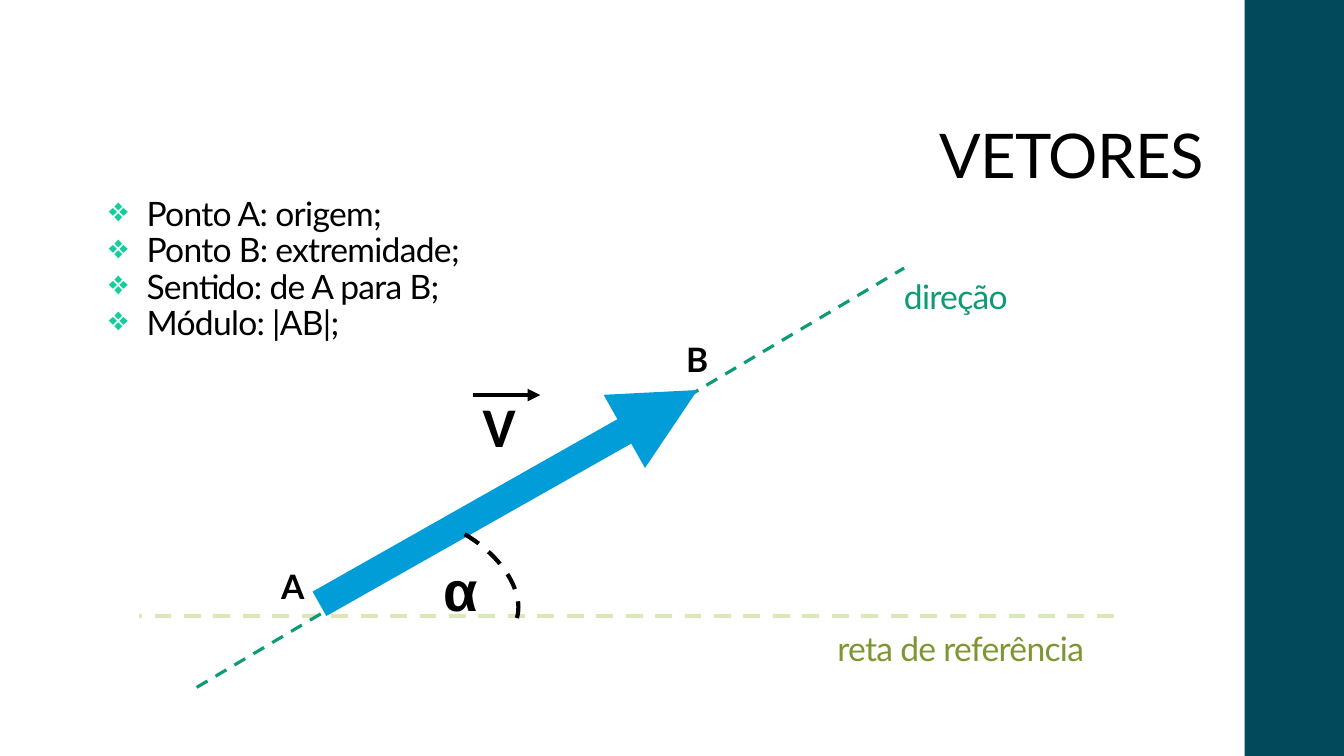
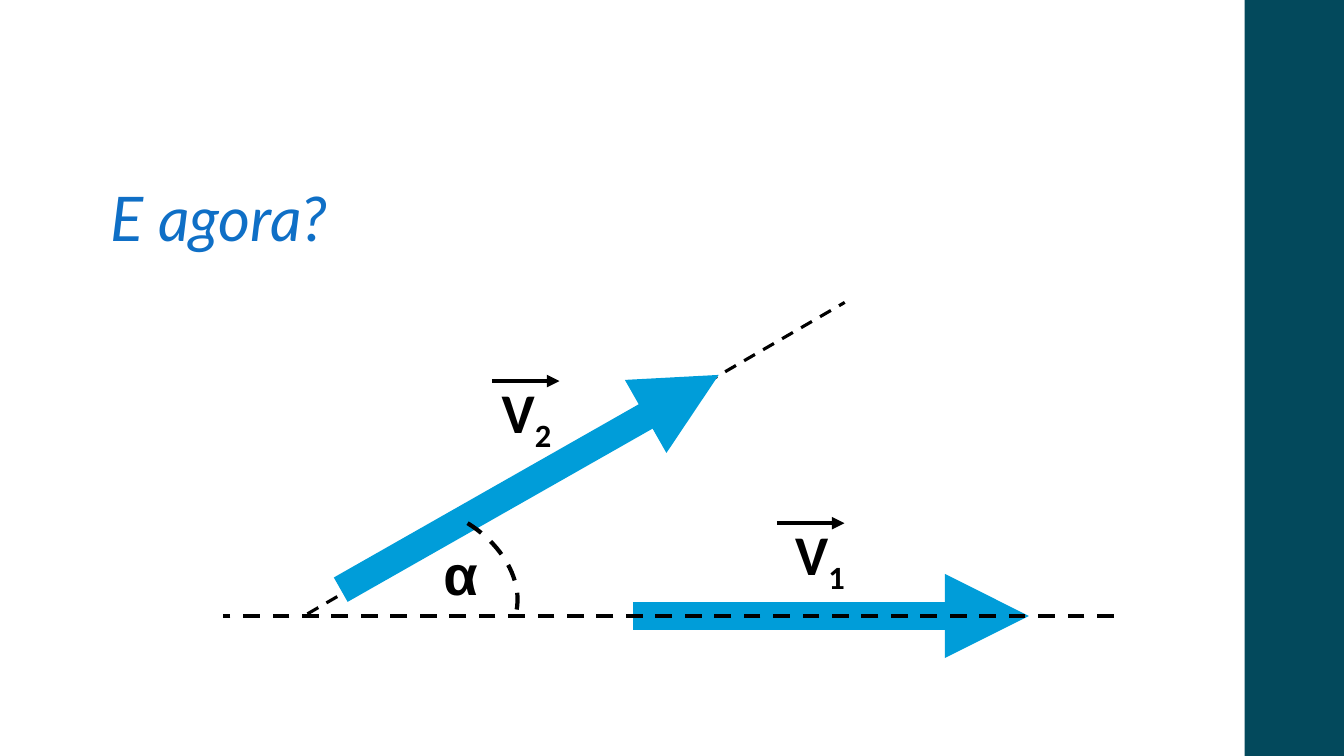
"""Two slides on vectors, drawn as native shapes."""
from dataclasses import dataclass
from typing import Any

from lxml import etree
from pptx import Presentation
from pptx import util as u
from pptx.dml.color import RGBColor
from pptx.enum import dml, shapes, text
from pptx.oxml import ns


@dataclass(frozen=True)
class Theme:
    """Colours, fonts and type sizes of the deck."""
    band: str = "03495C"
    ink: str = "000000"
    arrow: str = "009DD9"
    green: str = "0C9B74"
    mint: str = "10CF9B"
    pale: str = "DBE7B6"
    olive: str = "7E9632"
    blue: str = "0F6FC6"
    main: str = "Lato"
    sign: str = "Calibri"
    greek: str = "Arial"
    head: int = 44
    mark: int = 40
    body: int = 24


T = Theme()


@dataclass
class Box:
    """A region of a slide; shapes are placed from its top left corner."""
    tree: Any
    x: float
    y: float
    w: float
    h: float

    def at(self, x, y):
        """Turn a point of the region into slide lengths."""
        return u.Pt(self.x + x), u.Pt(self.y + y)

    def sub(self, x, y, w, h):
        """Return a smaller region inside this one."""
        return Box(self.tree, self.x + x, self.y + y, w, h)


def tag(node, name, **attrs):
    """Append a drawing element to a node."""
    return etree.SubElement(node, ns.qn(f"a:{name}"), attrs)


def style(run, size, color, font=T.main, bold=False, tight=False, italic=False):
    """Format one run of text."""
    run.font.size, run.font.name = u.Pt(size), font
    run.font.bold, run.font.italic = bold, italic
    run.font.color.rgb = RGBColor.from_string(color)
    if tight:
        run.font._element.set("spc", "-50")


def write(box, words, size, color, align=None, low=False, wrap=True, **look):
    """Fill a region with text, one paragraph a line."""
    shape = box.tree.add_textbox(*box.at(0, 0), u.Pt(box.w), u.Pt(box.h))
    frame = shape.text_frame
    frame.text = words
    frame.word_wrap = wrap
    frame.vertical_anchor = text.MSO_ANCHOR.BOTTOM if low else text.MSO_ANCHOR.TOP
    for para in frame.paragraphs:
        para.alignment = align
        if low:
            para.line_spacing = 0.9
        for run in para.runs:
            style(run, size, color, tight=low, **look)
    return frame


def pen(line, color, width, dash):
    """Set the stroke of a line."""
    line.color.rgb = RGBColor.from_string(color)
    line.width = u.Pt(width)
    if dash:
        line.dash_style = dml.MSO_LINE.DASH


def draw(box, start, end, color, width, dash=False, tip=False):
    """Draw a straight line, with an arrowhead if asked."""
    line = box.tree.add_connector(
        shapes.MSO_CONNECTOR.STRAIGHT, *box.at(*start), *box.at(*end))
    pen(line.line, color, width, dash)
    if tip:
        tag(line.line._get_or_add_ln(), "tailEnd", type="triangle")
    tag(line._element.spPr, "effectLst")


def vector(box, start, end):
    """Draw a thick vector arrow."""
    draw(box, start, end, T.arrow, 20, tip=True)


def name(box, x, y, index="", pad=0):
    """Write a vector name below its small arrow."""
    draw(box, (x, y), (x + 48.2, y), T.ink, 3, tip=True)
    area = box.sub(x + pad, y - 5.8, 80, 55.5)
    frame = write(area, "V", T.mark, T.ink, font=T.sign, bold=True)
    frame.margin_left = 0
    if index:
        run = frame.paragraphs[0].add_run()
        run.text = index
        style(run, T.mark, T.ink, T.sign, bold=True)
        run.font._element.set("baseline", "-25000")


def angle(box, curve, x, y):
    """Draw a dashed Bézier arc and its alpha sign."""
    dots = []
    for step in range(25):
        t = step / 24
        rate = ((1 - t) ** 3, 3 * t * (1 - t) ** 2, 3 * t * t * (1 - t), t ** 3)
        dots.append(box.at(*(sum(r * p[k] for r, p in zip(rate, curve))
                             for k in (0, 1))))
    form = box.tree.build_freeform(*dots[0])
    form.add_line_segments(dots[1:], close=False)
    arc = form.convert_to_shape()
    arc.fill.background()
    arc.shadow.inherit = False
    pen(arc.line, T.ink, 3, True)
    write(box.sub(x, y, 48.2, 55.5), "α", T.mark, T.ink, font=T.greek, bold=True)


def points(box, words):
    """Write a list with diamond bullets."""
    frame = write(box, words, T.body, T.ink, low=True)
    for para in frame.paragraphs:
        prop = para._p.get_or_add_pPr()
        prop.set("marL", str(u.Pt(27)))
        prop.set("indent", str(u.Pt(-27)))
        tag(tag(prop, "buClr"), "srgbClr", val=T.mint)
        tag(prop, "buChar", char="❖")


def single(box):
    """Draw one vector with its direction and reference line."""
    write(box.sub(491.6, 252.8, 204.5, 38.2), "reta de referência",
          T.body, T.olive, low=True)
    draw(box, (box.w, 250), (0, 250), T.pale, 3, dash=True)
    draw(box, (41, box.h), (546.3, 1.5), T.green, 2.25, dash=True)
    vector(box, (128.7, 241.3), (398.7, 88.6))
    name(box, 238.2, 92.2, pad=7)
    angle(box, ((232.5, 191.6), (260.5, 208.2), (276.3, 234.8), (269.1, 253.5)),
          210, 203)
    write(box.sub(539.1, 1.5, 110, 38.2), "direção", T.body, T.green, low=True)
    for mark, x, y in (("A", 94.2, 211), ("B", 383.6, 48.3)):
        write(box.sub(x, y, 31, 36), mark, T.body, T.ink, wrap=False, bold=True)


def pair(box):
    """Draw two vectors and the angle between them."""
    vector(box, (293, 224), (576, 224))
    name(box, 396, 157.7, "1", 13)
    draw(box, (box.w, 224), (0, 224), T.ink, 3, dash=True)
    draw(box, (60.6, 222.5), (444.4, 0), T.ink, 2.25, dash=True)
    vector(box, (84.4, 205.2), (354.4, 51.8))
    name(box, 192.4, 56.2, "2", 7)
    angle(box, ((175, 157.7), (202.9, 175), (216.8, 203.8), (208.2, 226.1)),
          150.6, 166)


def base(deck):
    """Add a blank slide with the side band and return its full region."""
    tree = deck.slides.add_slide(deck.slide_layouts[6]).shapes
    band = tree.add_shape(shapes.MSO_SHAPE.RECTANGLE,
                          u.Pt(889), 0, u.Pt(71), u.Pt(540))
    band.fill.solid()
    band.fill.fore_color.rgb = RGBColor.from_string(T.band)
    band.line.fill.background()
    band.shadow.inherit = False
    return Box(tree, 0, 0, 960, 540)


def main():
    """Build and save the deck."""
    deck = Presentation()
    deck.slide_width, deck.slide_height = u.Pt(960), u.Pt(540)

    page = base(deck)
    write(page.sub(-22, 36, 889, 104.4), "VETORES", T.head, T.ink,
          text.PP_ALIGN.RIGHT, low=True)
    single(page.sub(99.5, 190, 696, 301))
    points(page.sub(70.6, 131, 286.6, 117.4),
           "Ponto A: origem;\nPonto B: extremidade;\n"
           "Sentido: de A para B;\nMódulo: |AB|;")

    page = base(deck)
    pair(page.sub(159, 216, 636.6, 260))
    write(page.sub(72, 125.3, 759.6, 60.5), "E agora?", T.head, T.blue,
          text.PP_ALIGN.JUSTIFY, italic=True)

    deck.save("out.pptx")


if __name__ == "__main__":
    main()
